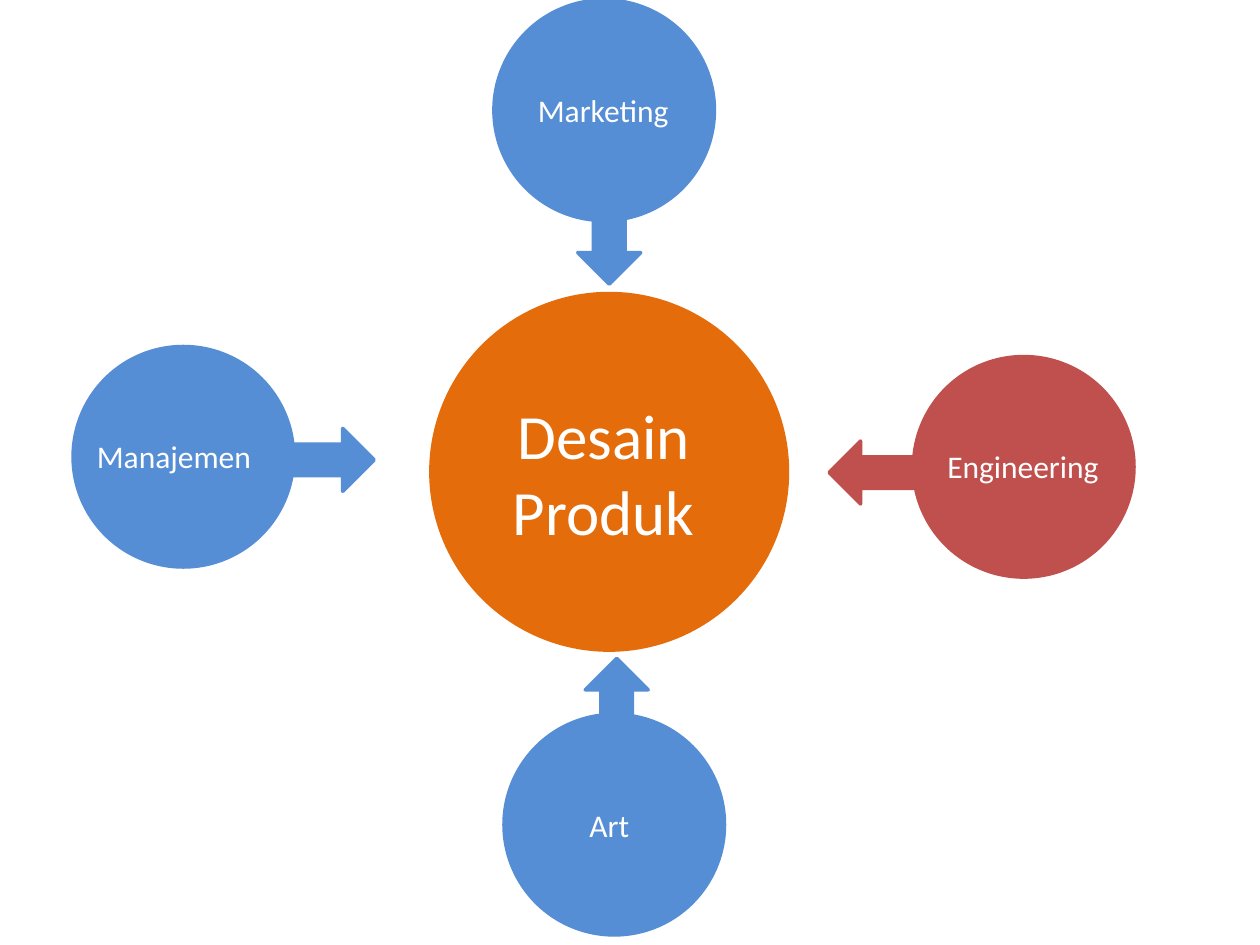
"""Build a slide showing four disciplines that feed into product design."""
from pptx import Presentation
from pptx.dml.color import RGBColor
from pptx.enum.shapes import MSO_SHAPE
from pptx.enum.text import MSO_AUTO_SIZE, PP_ALIGN
from pptx.util import Inches, Pt

COLORS = {"blue": "558ED5", "red": "C0504D", "orange": "E46C0A", "white": "FFFFFF"}
FONT = "Calibri"
CIRCLE_SIZE = (1.75, 1.75)
CENTER_SIZE = (2.83, 2.83)
ARROW_SIZE = (0.67, 0.5)
LABEL_SIZE = (1.5, 0.4)

DISCIPLINES = [
    {"name": "Art", "color": "blue", "circle": (4, 5.67),
     "label": (4.58, 6.35), "arrow": (4.56, 5.31), "rotation": 270},
    {"name": "Engineering", "color": "red", "circle": (7.25, 2.83),
     "label": (7.42, 3.5), "arrow": (6.58, 3.5), "rotation": 180},
    {"name": "Marketing", "color": "blue", "circle": (3.92, 0),
     "label": (4.17, 0.67), "arrow": (4.5, 1.67), "rotation": 90},
    {"name": "Manajemen", "color": "blue", "circle": (0.58, 2.75),
     "label": (0.67, 3.42), "arrow": (2.3, 3.4), "rotation": 0},
]


def add_filled_shape(slide, kind, position, size, color, rotation=0):
    shape = slide.shapes.add_shape(kind, *map(Inches, position + size))
    shape.rotation = rotation
    shape.shadow.inherit = False
    shape.fill.solid()
    shape.fill.fore_color.rgb = RGBColor.from_string(COLORS[color])
    shape.line.color.rgb = RGBColor.from_string(COLORS[color])
    shape.line.width = Pt(2)


def add_label(slide, text, position, size, points, alignment=PP_ALIGN.LEFT):
    text_box = slide.shapes.add_textbox(*map(Inches, position + size))
    text_frame = text_box.text_frame
    text_frame.word_wrap = True
    text_frame.auto_size = MSO_AUTO_SIZE.SHAPE_TO_FIT_TEXT
    paragraph = text_frame.paragraphs[0]
    paragraph.alignment = alignment
    run = paragraph.add_run()
    run.text = text
    run.font.name = FONT
    run.font.size = Pt(points)
    run.font.color.rgb = RGBColor.from_string(COLORS["white"])


def main():
    presentation = Presentation()
    presentation.slide_width = Inches(10)
    presentation.slide_height = Inches(7.5)
    slide = presentation.slides.add_slide(presentation.slide_layouts[6])

    for item in DISCIPLINES:
        add_filled_shape(slide, MSO_SHAPE.OVAL, item["circle"], CIRCLE_SIZE, item["color"])
        add_label(slide, item["name"], item["label"], LABEL_SIZE, 18)

    add_filled_shape(slide, MSO_SHAPE.OVAL, (3.42, 2.33), CENTER_SIZE, "orange")
    add_label(slide, "Desain Produk", (3.75, 3.1), (2.08, 1.31), 36, PP_ALIGN.CENTER)

    for item in DISCIPLINES:
        add_filled_shape(slide, MSO_SHAPE.RIGHT_ARROW, item["arrow"], ARROW_SIZE,
                         item["color"], item["rotation"])

    presentation.save("out.pptx")


if __name__ == "__main__":
    main()
